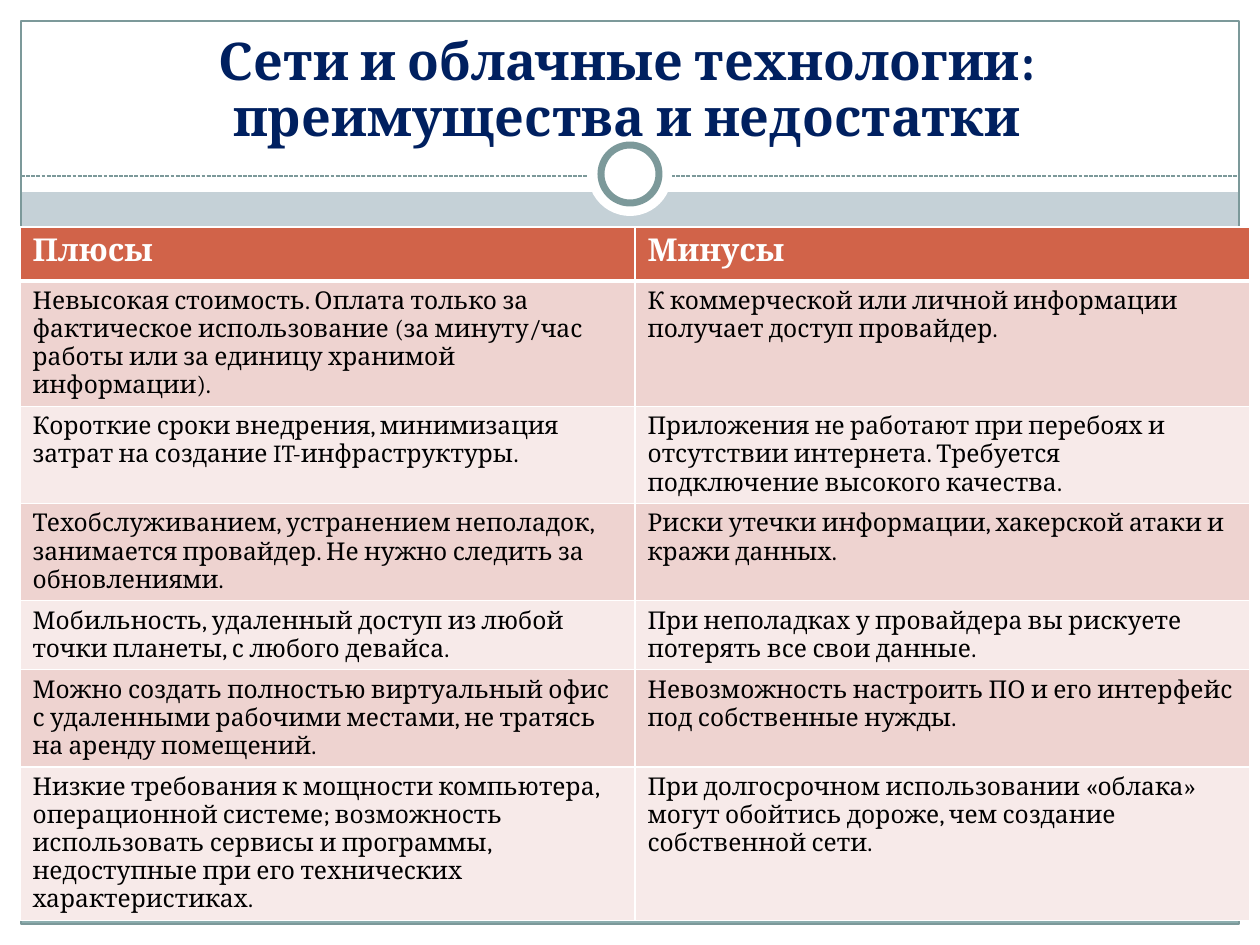
from lxml import etree
from pptx import Presentation
from pptx.dml.color import RGBColor
from pptx.enum.dml import MSO_LINE
from pptx.enum.shapes import MSO_CONNECTOR, MSO_SHAPE
from pptx.enum.text import MSO_ANCHOR, MSO_AUTO_SIZE, PP_ALIGN
from pptx.oxml.ns import qn
from pptx.util import Emu, Pt

RECTANGLE, OVAL = MSO_SHAPE.RECTANGLE, MSO_SHAPE.OVAL
STRAIGHT = MSO_CONNECTOR.STRAIGHT
DASH = MSO_LINE.SQUARE_DOT
CENTER, MIDDLE = PP_ALIGN.CENTER, MSO_ANCHOR.MIDDLE
NO_AUTOFIT = MSO_AUTO_SIZE.NONE

PX_PER_INCH = 126
WIDTH, HEIGHT, MARGIN = 1260, 945, 21
FONT = "Cambria"
WHITE, BLACK, NAVY = "FFFFFF", "000000", "002060"
BACKGROUND, BAR, OUTLINE = "C5D1D7", "8CADAE", "7C999A"
HEADER_FILL, BAND_FILLS = "D16349", ("EED3D0", "F7EAE9")

TITLE = "Сети и облачные технологии: преимущества и недостатки"
ROWS = [
    ("Плюсы", "Минусы"),
    ("Невысокая стоимость. Оплата только за фактическое использование "
     "(за минуту/час работы или за единицу хранимой информации).",
     "К коммерческой или личной информации получает доступ провайдер."),
    ("Короткие сроки внедрения, минимизация затрат на создание IT-инфраструктуры.",
     "Приложения не работают при перебоях и отсутствии интернета. "
     "Требуется  подключение высокого качества."),
    ("Техобслуживанием, устранением неполадок, занимается провайдер. "
     "Не нужно следить за обновлениями.",
     "Риски утечки информации, хакерской атаки и кражи данных."),
    ("Мобильность, удаленный доступ из любой точки планеты, с любого девайса.",
     "При неполадках у провайдера вы рискуете потерять все свои данные."),
    ("Можно создать полностью виртуальный офис с удаленными рабочими местами, "
     "не тратясь на аренду помещений.",
     "Невозможность настроить ПО и его интерфейс под собственные нужды."),
    ("Низкие требования к мощности компьютера, операционной системе; "
     "возможность использовать сервисы и программы, недоступные при его "
     "технических характеристиках.",
     "При долгосрочном использовании «облака» могут обойтись дороже, "
     "чем создание собственной сети."),
]


def px(length):
    """Turn slide pixels into EMU."""
    return Emu(round(length * 914400 / PX_PER_INCH))


def color(value):
    """Turn a hex string into a colour."""
    return RGBColor.from_string(value)


def format_text(paragraph, size, text_color, bold):
    """Format every run of a paragraph."""
    for run in paragraph.runs:
        run.font.name = FONT
        run.font.size = Pt(size)
        run.font.bold = bold
        run.font.color.rgb = color(text_color)


def add_block(slide, preset, box, fill=None, line=None, line_width=0.75):
    """Add a preset shape with an optional fill and outline."""
    shape = slide.shapes.add_shape(preset, *map(px, box))
    shape.shadow.inherit = False
    if fill:
        shape.fill.solid()
        shape.fill.fore_color.rgb = color(fill)
    else:
        shape.fill.background()
    if line:
        shape.line.color.rgb = color(line)
        shape.line.width = Pt(line_width)
    else:
        shape.line.fill.background()


def add_divider(slide, left, right, y):
    """Add the dashed line below the title."""
    divider = slide.shapes.add_connector(STRAIGHT, px(left), px(y), px(right), px(y))
    divider.line.color.rgb = color(OUTLINE)
    divider.line.width = Pt(0.75)
    divider.line.dash_style = DASH
    etree.SubElement(divider.element.spPr, qn("a:effectLst"))


def add_ring(slide, center_x, center_y):
    """Add the white disc and the ring inside it."""
    for diameter, line in ((84, None), (58, OUTLINE)):
        box = (center_x - diameter // 2, center_y - diameter // 2, diameter, diameter)
        add_block(slide, OVAL, box, WHITE, line, 4)


def add_frame(slide, left, top, width, height):
    """Add the white margins, the bottom bar, the outline and the ring."""
    inner_width, inner_height = width - 2 * MARGIN, height - 2 * MARGIN
    right, bottom = left + width - MARGIN, top + height - MARGIN
    margins = [
        (left, bottom, width, MARGIN),
        (left, top, width, 192),
        (left, top, MARGIN, height),
        (right, top, MARGIN, height),
    ]
    for box in margins:
        add_block(slide, RECTANGLE, box, WHITE)
    add_block(slide, RECTANGLE, (left + MARGIN, bottom - 43, inner_width, 43), BAR)
    add_block(slide, RECTANGLE, (left + MARGIN, top + MARGIN, inner_width, inner_height),
              line=OUTLINE)
    add_divider(slide, left + MARGIN, right, top + 176)
    add_ring(slide, left + width // 2, top + 174)


def place_title(slide, left, top, width, height):
    """Fill the title placeholder and bring it in front of the frame."""
    title = slide.shapes.title
    title.left, title.top, title.width, title.height = map(px, (left, top, width, height))
    text_frame = title.text_frame
    text_frame.text = TITLE
    text_frame.word_wrap = True
    text_frame.auto_size = NO_AUTOFIT
    text_frame.vertical_anchor = MIDDLE
    text_frame.margin_top = text_frame.margin_bottom = 0
    paragraph = text_frame.paragraphs[0]
    paragraph.alignment = CENTER
    paragraph.line_spacing = 0.9
    format_text(paragraph, 29.7, NAVY, True)
    slide.shapes.element.append(title.element)


def set_borders(cell, top, bottom):
    """Give a cell white borders, with the top and bottom widths in points."""
    properties = cell._tc.get_or_add_tcPr()
    for side, width in (("L", 1), ("R", 1), ("T", top), ("B", bottom)):
        border = etree.SubElement(properties, qn(f"a:ln{side}"), w=str(Pt(width)))
        fill = etree.SubElement(border, qn("a:solidFill"))
        etree.SubElement(fill, qn("a:srgbClr"), val=WHITE)


def add_comparison(slide, left, top, width, height):
    """Add the table of advantages and disadvantages."""
    frame = slide.shapes.add_table(len(ROWS), 2, *map(px, (left, top, width, height)))
    table = frame.table
    for column in table.columns:
        column.width = px(width // 2)
    for row_index, texts in enumerate(ROWS):
        table.rows[row_index].height = px(54)
        is_header = row_index == 0
        fill = HEADER_FILL if is_header else BAND_FILLS[(row_index - 1) % 2]
        style = (18, WHITE, True) if is_header else (14, BLACK, False)
        for column_index, text in enumerate(texts):
            cell = table.cell(row_index, column_index)
            cell.text_frame.text = text
            format_text(cell.text_frame.paragraphs[0], *style)
            set_borders(cell, 3 if row_index == 1 else 1, 3 if is_header else 1)
            cell.fill.solid()
            cell.fill.fore_color.rgb = color(fill)
    frame.height = px(height)


def main():
    """Build and save the slide."""
    presentation = Presentation()
    presentation.slide_width, presentation.slide_height = px(WIDTH), px(HEIGHT)
    slide = presentation.slides.add_slide(presentation.slide_layouts[5])
    slide.background.fill.solid()
    slide.background.fill.fore_color.rgb = color(BACKGROUND)
    add_frame(slide, 0, 0, WIDTH, HEIGHT)
    place_title(slide, 39, 28, 1176, 128)
    add_comparison(slide, 20, 227, 1230, 659)
    presentation.save("out.pptx")


if __name__ == "__main__":
    main()
